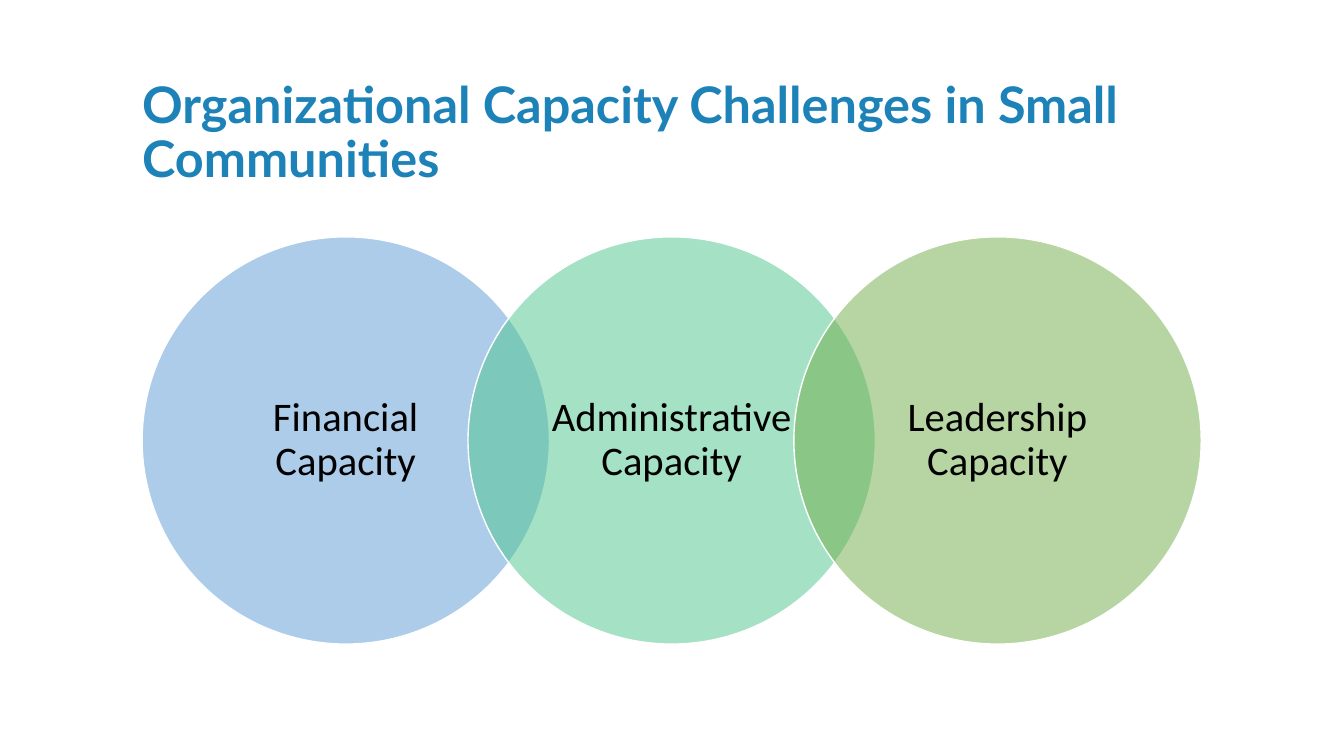
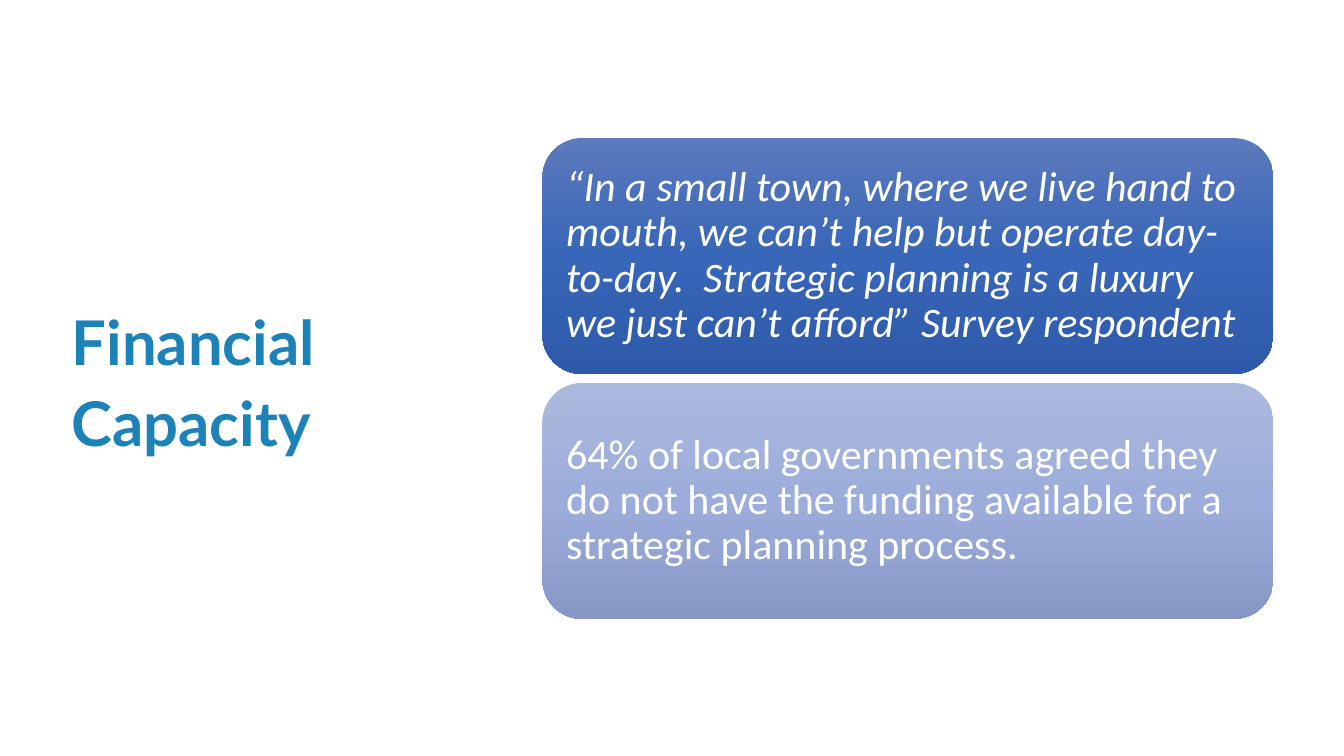
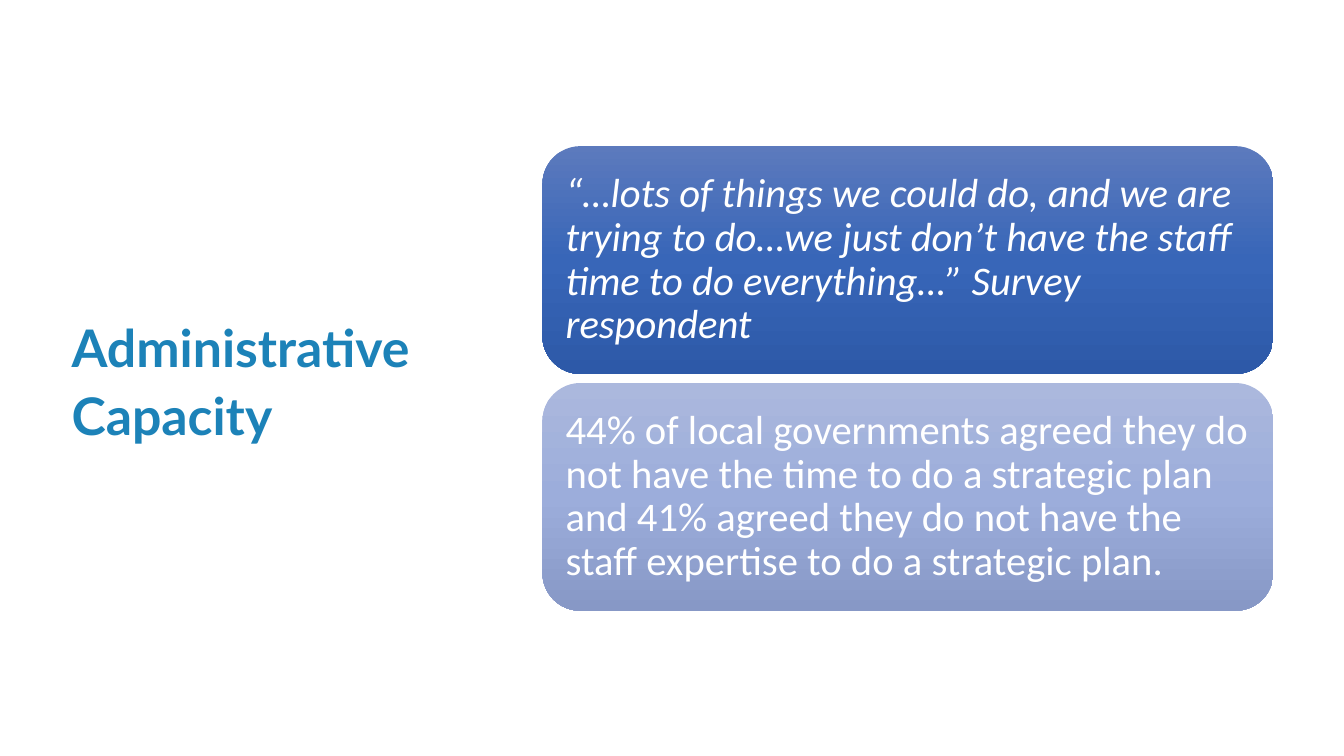
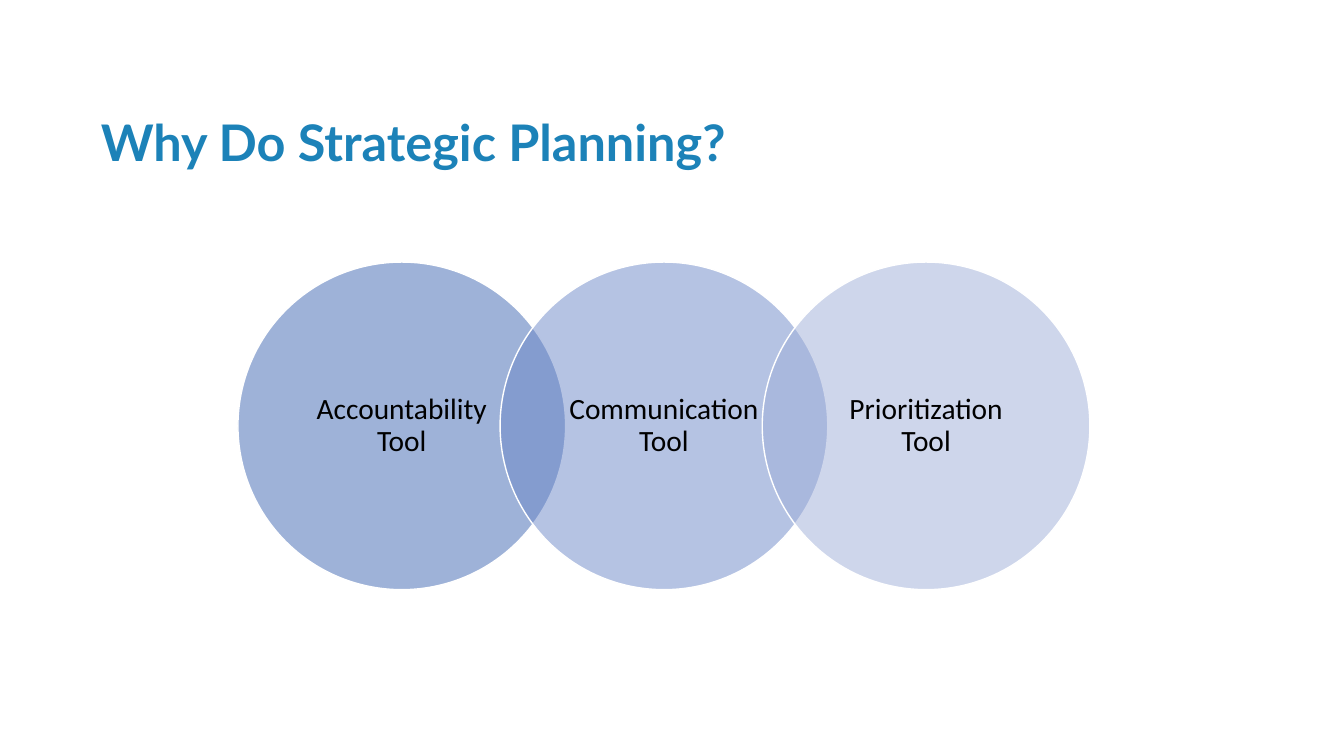
from copy import deepcopy

from pptx import Presentation
from pptx.dml.color import RGBColor
from pptx.enum.shapes import MSO_SHAPE
from pptx.enum.text import MSO_ANCHOR, MSO_AUTO_SIZE, PP_ALIGN
from pptx.oxml.ns import qn
from pptx.oxml.xmlchemy import OxmlElement
from pptx.util import Inches, Pt

COLORS = {
    "title": "1C82B8",
    "white": "FFFFFF",
    "black": "000000",
    "sky": "5B9BD5",
    "mint": "4DC58D",
    "leaf": "70AD47",
    "deep_blue": "3E67B2",
    "mid_blue": "6C88C8",
    "pale_blue": "9FAED8",
    "quote_top": "5C7ABD",
    "quote_middle": "3866B8",
    "quote_bottom": "2D59A8",
    "fact_top": "ABB8DD",
    "fact_middle": "9CADDB",
    "fact_bottom": "8798C6",
}


def color(name):
    return RGBColor.from_string(COLORS[name])


def set_text(shape, text, font_name, size, color_name, align, anchor, spacing, inset_x, inset_y):
    frame = shape.text_frame
    frame.text = text
    frame.word_wrap = True
    frame.auto_size = MSO_AUTO_SIZE.NONE
    frame.vertical_anchor = anchor
    frame.margin_left = frame.margin_right = Inches(inset_x)
    frame.margin_top = frame.margin_bottom = Inches(inset_y)
    paragraph = frame.paragraphs[0]
    paragraph.alignment = align
    paragraph.line_spacing = spacing
    paragraph.font.name = font_name
    paragraph.font.size = Pt(size)
    paragraph.font.color.rgb = color(color_name)
    return paragraph


presentation = Presentation()
presentation.slide_width = Inches(13.33)
presentation.slide_height = Inches(7.5)
title_only = presentation.slide_layouts[5]

titles = [
    ("Organizational Capacity Challenges in Small Communities",
     (1.41, 0.67, 11.15, 1.2), 36, MSO_ANCHOR.BOTTOM, 0.9),
    ("Financial Capacity", (0.71, 1.51, 3.88, 4.48), 44, MSO_ANCHOR.MIDDLE, 1.1),
    ("Administrative Capacity", (0.71, 1.51, 3.88, 4.48), 37, MSO_ANCHOR.MIDDLE, 1.1),
    ("Why Do Strategic Planning?", (1, 1, 11.15, 0.7), 36, MSO_ANCHOR.BOTTOM, 1.1),
]
slides = []
for text, box, size, anchor, spacing in titles:
    slide = presentation.slides.add_slide(title_only)
    title = slide.shapes.title
    title.left, title.top, title.width, title.height = [Inches(value) for value in box]
    paragraph = set_text(title, text, "Lato", size, "title", PP_ALIGN.LEFT, anchor, spacing, 0, 0)
    paragraph.font.bold = True
    slides.append(slide)

capacity_slide, financial_slide, administrative_slide, purpose_slide = slides

circle_rows = [
    (capacity_slide, 1.41, 2.35, 4.04, 29, 0.22, 0.04,
     [("Financial Capacity", "sky"),
      ("Administrative Capacity", "mint"),
      ("Leadership Capacity", "leaf")]),
    (purpose_slide, 2.36, 2.6, 3.25, 21, 0.18, 0.03,
     [("Accountability Tool", "deep_blue"),
      ("Communication Tool", "mid_blue"),
      ("Prioritization Tool", "pale_blue")]),
]
for slide, left, top, diameter, size, inset_x, inset_y, circles in circle_rows:
    for index, (text, fill_name) in enumerate(circles):
        circle = slide.shapes.add_shape(
            MSO_SHAPE.OVAL, Inches(left + index * diameter * 0.8), Inches(top),
            Inches(diameter), Inches(diameter))
        circle.shadow.inherit = False
        circle.fill.solid()
        circle.fill.fore_color.rgb = color(fill_name)
        alpha = OxmlElement("a:alpha")
        alpha.set("val", "50000")
        circle._element.spPr.find(qn("a:solidFill")).find(qn("a:srgbClr")).append(alpha)
        circle.line.color.rgb = color("white")
        circle.line.width = Pt(1)
        set_text(circle, text, "Calibri", size, "black", PP_ALIGN.CENTER,
                 MSO_ANCHOR.MIDDLE, 0.9, inset_x, inset_y)

panel_gap = 0.09
fact_top = 3.8
panel_columns = [
    (financial_slide, 2.34, 30,
     "“In a small town, where we live hand to mouth, we can’t help but operate day-to-day.  "
     "Strategic planning is a luxury we just can’t afford” Survey respondent",
     "64% of local governments agreed they do not have the funding available for a "
     "strategic planning process."),
    (administrative_slide, 2.26, 29,
     "“…lots of things we could do, and we are trying to do…we just don’t have the staff "
     "time to do everything…” Survey respondent",
     "44% of local governments agreed they do not have the time to do a strategic plan "
     "and 41% agreed they do not have the staff expertise to do a strategic plan."),
]
for slide, height, size, quote, fact in panel_columns:
    panels = [("quote", quote, fact_top - panel_gap - height), ("fact", fact, fact_top)]
    for kind, text, top in panels:
        panel = slide.shapes.add_shape(
            MSO_SHAPE.ROUNDED_RECTANGLE, Inches(5.38), Inches(top), Inches(7.25), Inches(height))
        panel.shadow.inherit = False
        panel.line.fill.background()
        panel.fill.gradient()
        panel.fill.gradient_angle = 270
        stop_list = panel._element.spPr.find(qn("a:gradFill")).find(qn("a:gsLst"))
        stop_list.append(deepcopy(stop_list[-1]))
        for index, part in enumerate(("top", "middle", "bottom")):
            stop = panel.fill.gradient_stops[index]
            stop.position = index / 2
            stop.color.rgb = color(f"{kind}_{part}")
        paragraph = set_text(panel, text, "Calibri", size, "white", PP_ALIGN.LEFT,
                             MSO_ANCHOR.MIDDLE, 0.9, 0.12, 0.12)
        paragraph.font.italic = kind == "quote"

presentation.save("out.pptx")
